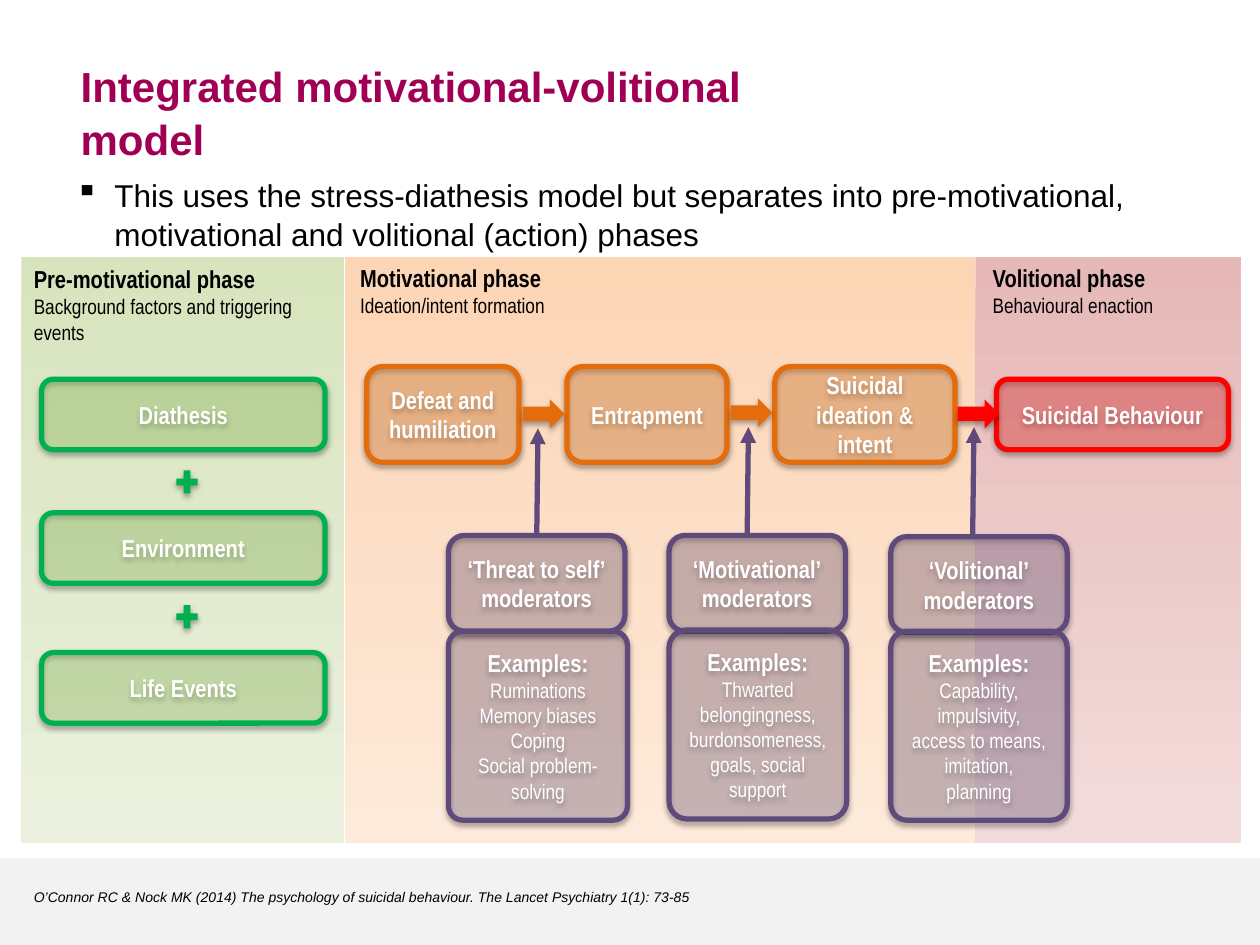
from dataclasses import dataclass
from lxml.etree import SubElement as Sub
from pptx import Presentation
from pptx.dml.color import RGBColor
from pptx.enum.shapes import MSO_CONNECTOR as Conn, MSO_SHAPE as Shape
from pptx.enum.text import MSO_ANCHOR as Anchor, MSO_AUTO_SIZE as Auto, PP_ALIGN as Align
from pptx.oxml.ns import qn
from pptx.util import Pt

PX = 9144
COLORS = {
    "title": "A00054", "black": "000000", "white": "FFFFFF", "band": "F2F2F2",
    "green": "00B050", "lime": "92D050", "orange": "E46C0A",
    "red": "FF0000", "purple": "604A7B",
}
SANS, NARROW = "Arial", "Arial Narrow"


@dataclass
class Phase:
    x: int
    w: int
    top: str
    bottom: str
    label_x: int
    label_y: int
    label_w: int
    label_h: int
    name: str
    detail: str


@dataclass
class Box:
    x: int
    y: int
    w: int
    h: int
    fill: str
    line: str
    heads: tuple[str, ...]
    details: tuple[str, ...] = ()
    corner: float = 0.1667


@dataclass
class Icon:
    kind: Shape
    x: int
    y: int
    w: int
    h: int
    color: str
    rotation: int = 0


PHASES = [
    Phase(17, 256, "D7E4BD", "EBF1DE", 17, 205, 256, 74,
          "Pre-motivational phase", "Background factors and triggering events"),
    Phase(274, 500, "FCD5B5", "FDEADA", 276, 204, 256, 54,
          "Motivational phase", "Ideation/intent formation"),
    Phase(774, 211, "E6B9B8", "F2DCDB", 778, 204, 207, 54,
          "Volitional phase", "Behavioural enaction"),
]
BACKGROUND = [
    Box(33, y, 225, 56, "lime", "green", (name,))
    for y, name in [(301, "Diathesis"), (407, "Environment"), (518, "Life Events")]
]
PATHWAY = [
    Box(x, 291, w, 76, "orange", "orange", (name,))
    for x, w, name in [(291, 121, "Defeat and humiliation"), (450, 127, "Entrapment"),
                       (615, 143, "Suicidal ideation & intent")]
]
BEHAVIOUR = Box(791, 301, 184, 56, "red", "red", ("Suicidal Behaviour",))
MODERATORS = [
    Box(x, y, 140, 76, "purple", "purple", (name, "moderators"))
    for x, y, name in [(356, 425, "‘Threat to self’"), (531, 425, "‘Motivational’"),
                       (707, 426, "‘Volitional’")]
]
EXAMPLES = [
    Box(x, y, w, 150, "purple", "purple", ("Examples:",), details, corner)
    for x, y, w, corner, details in [
        (356, 501, 142, 0.08,
         ("Ruminations", "Memory biases", "Coping", "Social problem- solving")),
        (531, 500, 141, 0.1,
         ("Thwarted belongingness, burdonsomeness, goals, social support",)),
        (707, 501, 140, 0.09,
         ("Capability, impulsivity,", "access to means, imitation,", "planning")),
    ]
]
ICONS = [
    Icon(Shape.DOWN_ARROW, x, y, 23, 33, color, 270)
    for x, y, color in [(420, 312, "orange"), (585, 311, "orange"), (765, 312, "red")]
] + [Icon(Shape.MATH_PLUS, 137, y, 23, 25, "green") for y in (370, 477)]
LINKS = [(426, 425, 340), (593, 424, 339), (772, 424, 339)]


def rgb(name: str) -> RGBColor:
    return RGBColor.from_string(COLORS.get(name, name))


def px(*values: int) -> list[int]:
    return [v * PX for v in values]


def style(p, size: int, color: str, font=NARROW, bold=False, italic=False) -> None:
    f = p.font
    f.name, f.size, f.bold, f.italic = font, Pt(size), bold, italic
    f.color.rgb = rgb(color)


def write(tf, heads, details, color: str, align: Align) -> None:
    for i, text in enumerate((*heads, *details)):
        p = tf.paragraphs[0] if i == 0 else tf.add_paragraph()
        p.text = text
        p.alignment = align
        is_head = i < len(heads)
        style(p, 14 if is_head else 12, color, bold=is_head)


def add_text(s, x: int, y: int, w: int, h: int):
    tf = s.shapes.add_textbox(*px(x, y, w, h)).text_frame
    tf.word_wrap = True
    tf.auto_size = Auto.SHAPE_TO_FIT_TEXT
    return tf


def add_plain(s, kind: Shape, x: int, y: int, w: int, h: int):
    sp = s.shapes.add_shape(kind, *px(x, y, w, h))
    sp.shadow.inherit = False
    sp.line.fill.background()
    return sp


def add_shadow(sp) -> None:
    effects = sp._element.spPr.find(qn("a:effectLst"))
    outer = Sub(effects, qn("a:outerShdw"), blurRad="40000", dist="23000",
                dir="5400000", rotWithShape="0")
    color = Sub(outer, qn("a:srgbClr"), val=COLORS["black"])
    Sub(color, qn("a:alpha"), val="35000")


def add_phase(s, phase: Phase) -> None:
    sp = add_plain(s, Shape.RECTANGLE, phase.x, 204, phase.w, 465)
    sp.fill.gradient()
    sp.fill.gradient_angle = 270
    for stop, color, position in zip(sp.fill.gradient_stops, (phase.top, phase.bottom), (0, 1)):
        stop.color.rgb = rgb(color)
        stop.position = position


def add_label(s, phase: Phase) -> None:
    tf = add_text(s, phase.label_x, phase.label_y, phase.label_w, phase.label_h)
    write(tf, (phase.name,), (phase.detail,), "black", Align.LEFT)


def add_box(s, box: Box):
    sp = add_plain(s, Shape.ROUNDED_RECTANGLE, box.x, box.y, box.w, box.h)
    sp.adjustments[0] = box.corner
    sp.fill.solid()
    sp.fill.fore_color.rgb = rgb(box.fill)
    Sub(sp._element.spPr.find(qn("a:solidFill"))[0], qn("a:alpha"), val="25000")
    sp.line.color.rgb = rgb(box.line)
    sp.line.width = Pt(3)
    add_shadow(sp)
    tf = sp.text_frame
    tf.word_wrap = True
    tf.vertical_anchor = Anchor.MIDDLE
    write(tf, box.heads, box.details, "white", Align.CENTER)
    return sp


def add_icon(s, icon: Icon) -> None:
    sp = add_plain(s, icon.kind, icon.x, icon.y, icon.w, icon.h)
    sp.rotation = icon.rotation
    sp.fill.solid()
    sp.fill.fore_color.rgb = rgb(icon.color)
    add_shadow(sp)


def add_link(s, x: int, start: int, end: int):
    cx = s.shapes.add_connector(Conn.STRAIGHT, *px(x, start, x + 1, end))
    cx.line.color.rgb = rgb("purple")
    cx.line.width = Pt(3)
    Sub(cx.line._get_or_add_ln(), qn("a:tailEnd"), type="triangle")
    Sub(cx._element.spPr, qn("a:effectLst"))
    return cx


def add_heading(s) -> None:
    title = s.shapes.title
    title.left, title.top, title.width, title.height = px(54, 41, 850, 74)
    tf = title.text_frame
    tf.word_wrap = True
    tf.auto_size = Auto.NONE
    tf.vertical_anchor = Anchor.TOP
    p = tf.paragraphs[0]
    p.text = "Integrated motivational-volitional\vmodel"
    p.alignment = Align.LEFT
    p.line_spacing = 1.05
    style(p, 24, "title", SANS, bold=True)

    p = add_text(s, 17, 700, 836, 24).paragraphs[0]
    p.text = ("O’Connor RC & Nock MK (2014) The psychology of suicidal behaviour. "
              "The Lancet Psychiatry 1(1): 73-85")
    style(p, 8, "black", SANS, italic=True)

    p = add_text(s, 50, 133, 912, 71).paragraphs[0]
    p.text = ("This uses the stress-diathesis model but separates into pre-motivational, "
              "motivational and volitional (action) phases")
    pPr = p._p.get_or_add_pPr()
    pPr.set("marL", str(31 * PX))
    pPr.set("indent", str(-31 * PX))
    Sub(pPr, qn("a:buChar"), char="▪")
    p.line_spacing = 1.05
    style(p, 18, "black", SANS)


def main() -> None:
    prs = Presentation()
    prs.slide_width, prs.slide_height = px(1000, 750)
    s = prs.slides.add_slide(prs.slide_layouts[5])
    band = add_plain(s, Shape.RECTANGLE, 0, 681, 1000, 69)
    band.fill.solid()
    band.fill.fore_color.rgb = rgb("band")
    add_heading(s)
    for phase in PHASES:
        add_phase(s, phase)
    for box in [*BACKGROUND, BEHAVIOUR, *PATHWAY]:
        add_box(s, box)
    moderators = [add_box(s, box) for box in MODERATORS]
    for box in EXAMPLES:
        add_box(s, box)
    for icon in ICONS:
        add_icon(s, icon)
    links = [add_link(s, *link) for link in LINKS]
    links[0].begin_connect(moderators[0], 0)
    for phase in PHASES:
        add_label(s, phase)
    prs.save("out.pptx")


if __name__ == "__main__":
    main()
